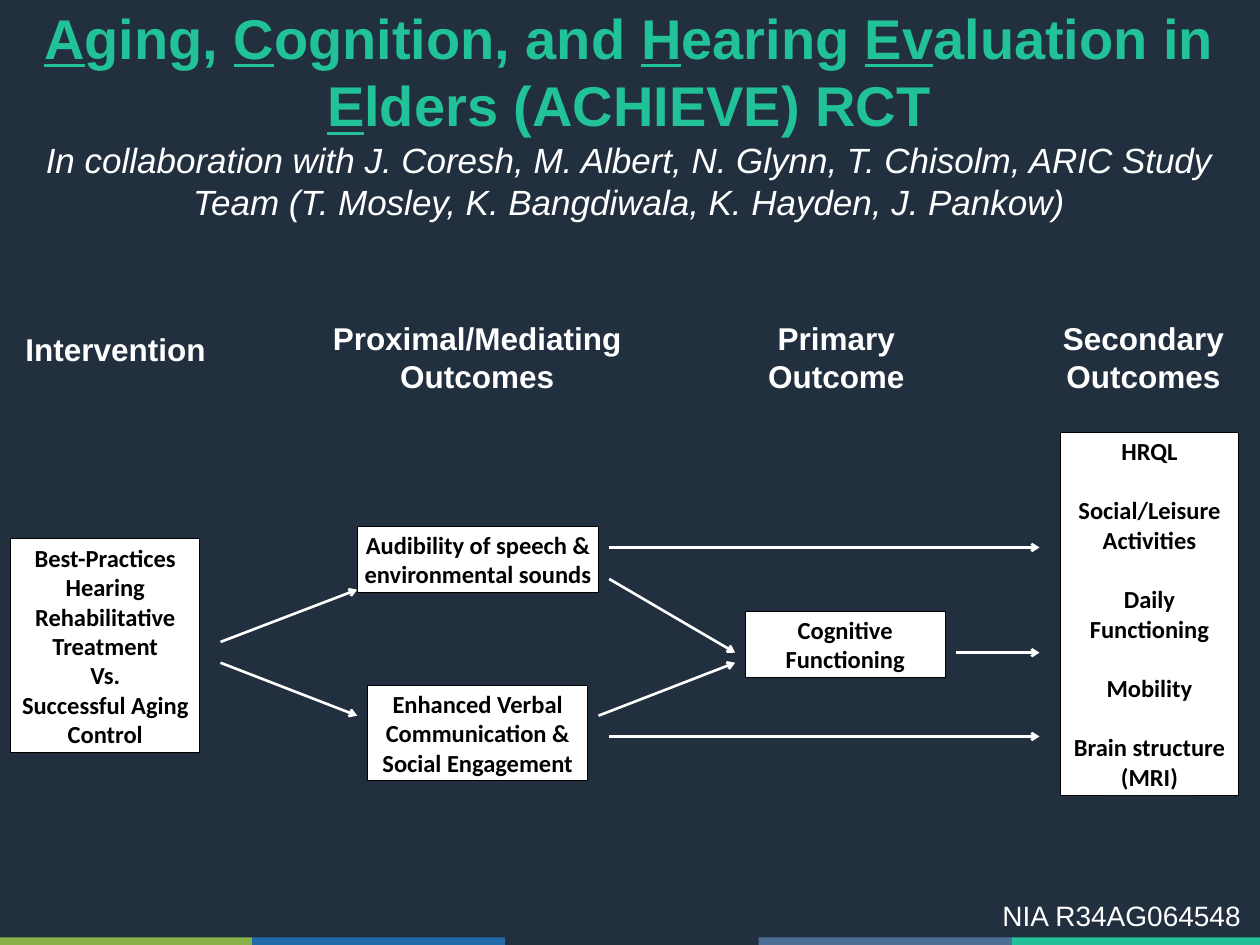
import pptx
import pptx.util
import pptx.dml.color
import pptx.enum.shapes
import pptx.enum.text
import lxml.etree
from dataclasses import dataclass
from pptx.util import Inches


@dataclass(frozen=True)
class Theme:
    navy: str = "212F3F"
    teal: str = "22C299"
    white: str = "FFFFFF"
    black: str = "000000"
    bands: tuple = ("8AB147", "216BA9", "212F3F", "4D6F96", "22C199")
    title_size: int = 64
    subtitle_size: int = 40
    heading_size: int = 36
    grant_size: int = 32
    box_size: int = 28
    group_gap: float = 34.2
    arrow_width: int = 3
    box_line: float = 0.75


THEME = Theme()

# Content: (text, underlined) pieces of the title
TITLE = [("A", True), ("ging, ", False), ("C", True), ("ognition, and ", False),
         ("H", True), ("earing ", False), ("Ev", True), ("aluation in ", False),
         ("E", True), ("lders (ACHIEVE) RCT", False)]
SUBTITLE = ("In collaboration with J. Coresh, M. Albert, N. Glynn, T. Chisolm, ARIC Study "
            "Team (T. Mosley, K. Bangdiwala, K. Hayden, J. Pankow)")
GRANT = "NIA R34AG064548"
TITLE_AREA = (0.29, 0.01, 19.38, 3.6)
GRANT_AREA = (15.8, 14.21, 4.01, 0.64)

# Column headings: lines, area (left, top, width, height)
HEADINGS = [
    (["Intervention"], (0.29, 5.19, 3.09, 0.71)),
    (["Proximal/Mediating", "Outcomes"], (5.16, 5.02, 4.83, 1.31)),
    (["Primary", "Outcome"], (12.08, 5.02, 2.39, 1.31)),
    (["Secondary", "Outcomes"], (16.76, 5.02, 2.78, 1.31)),
]

# Boxes: groups of lines (a gap precedes each later group), area
BOXES = [
    ([["Best-Practices Hearing Rehabilitative Treatment", "Vs.", "Successful Aging Control"]],
     (0.17, 8.55, 3, 3.4)),
    ([["Audibility of speech & environmental sounds"]], (5.67, 8.36, 3.83, 1.04)),
    ([["Enhanced Verbal Communication & Social Engagement"]], (5.83, 10.88, 3.5, 1.51)),
    ([["Cognitive", "Functioning"]], (11.83, 9.71, 3.17, 1.04)),
    ([["HRQL"], ["Social/Leisure Activities"], ["Daily", "Functioning"], ["Mobility"],
      ["Brain structure (MRI)"]], (16.83, 6.86, 2.83, 5.76)),
]

# Arrows: start x, start y, end x, end y
ARROWS = [
    (3.5, 10.19, 5.67, 9.36),
    (3.5, 10.52, 5.67, 11.36),
    (9.67, 9.19, 11.67, 10.36),
    (9.5, 11.36, 11.67, 10.52),
    (9.67, 8.69, 16.5, 8.69),
    (9.67, 11.69, 16.5, 11.69),
    (15.17, 10.36, 16.5, 10.36),
]

RECTANGLE = pptx.enum.shapes.MSO_SHAPE.RECTANGLE
CENTER = pptx.enum.text.PP_ALIGN.CENTER
TOP = pptx.enum.text.MSO_ANCHOR.TOP
MIDDLE = pptx.enum.text.MSO_ANCHOR.MIDDLE


def rgb(color):
    return pptx.dml.color.RGBColor.from_string(color)


def inches(area):
    return [Inches(value) for value in area]


def add_run(paragraph, text, size, color, **formats):
    run = paragraph.add_run()
    run.text = text
    values = {"name": "Arial", "size": pptx.util.Pt(size), **formats}
    for name, value in values.items():
        setattr(run.font, name, value)
    run.font.color.rgb = rgb(color)


def set_frame(frame, wrap, anchor):
    values = {"word_wrap": wrap, "vertical_anchor": anchor,
              "auto_size": pptx.enum.text.MSO_AUTO_SIZE.NONE}
    for name, value in values.items():
        setattr(frame, name, value)


def fill_lines(frame, groups, size, color, **formats):
    """Write groups of centred lines, with a gap before each later group."""
    paragraph = None
    for group in groups:
        for index, line in enumerate(group):
            first = paragraph is None
            paragraph = frame.paragraphs[0] if first else frame.add_paragraph()
            paragraph.alignment = CENTER
            gap = THEME.group_gap if index == 0 and not first else 0
            paragraph.space_before = pptx.util.Pt(gap)
            add_run(paragraph, line, size, color, **formats)


def add_rectangle(slide, area, color):
    shape = slide.shapes.add_shape(RECTANGLE, *inches(area))
    shape.shadow.inherit = False
    shape.fill.solid()
    shape.fill.fore_color.rgb = rgb(color)
    shape.line.fill.background()
    return shape


def add_label(slide, area, lines, size, **formats):
    frame = slide.shapes.add_textbox(*inches(area)).text_frame
    set_frame(frame, False, TOP)
    fill_lines(frame, [lines], size, THEME.white, **formats)


def add_box(slide, area, groups):
    box = add_rectangle(slide, area, THEME.white)
    box.line.color.rgb = rgb(THEME.black)
    box.line.width = pptx.util.Pt(THEME.box_line)
    set_frame(box.text_frame, True, MIDDLE)
    fill_lines(box.text_frame, groups, THEME.box_size, THEME.black, name="Calibri", bold=True)


def add_arrow(slide, ends):
    straight = pptx.enum.shapes.MSO_CONNECTOR.STRAIGHT
    arrow = slide.shapes.add_connector(straight, *inches(ends))
    arrow.line.color.rgb = rgb(THEME.white)
    arrow.line.width = pptx.util.Pt(THEME.arrow_width)
    tail = lxml.etree.SubElement(arrow.line._get_or_add_ln(), pptx.oxml.ns.qn("a:tailEnd"))
    tail.set("type", "arrow")
    properties = arrow._element.spPr
    lxml.etree.SubElement(properties, pptx.oxml.ns.qn("a:effectLst"))


def add_title(slide):
    title = slide.shapes.title
    for name, value in zip(("left", "top", "width", "height"), inches(TITLE_AREA)):
        setattr(title, name, value)
    frame = title.text_frame
    set_frame(frame, True, TOP)
    heading, subtitle = frame.paragraphs[0], frame.add_paragraph()
    heading.alignment = subtitle.alignment = CENTER
    for text, underlined in TITLE:
        add_run(heading, text, THEME.title_size, THEME.teal, bold=True, underline=underlined)
    add_run(subtitle, SUBTITLE, THEME.subtitle_size, THEME.white, bold=False, italic=True)


def main():
    presentation = pptx.Presentation()
    presentation.slide_width, presentation.slide_height = Inches(20), Inches(15)
    slide = presentation.slides.add_slide(presentation.slide_layouts[5])
    slide.background.fill.solid()
    slide.background.fill.fore_color.rgb = rgb(THEME.navy)

    # Colour bands along the bottom edge
    for index, color in enumerate(THEME.bands):
        add_rectangle(slide, (-0.02 + 4.02 * index, 14.88, 4.02, 0.2), color)

    # Title and column headings
    add_title(slide)
    for lines, area in HEADINGS:
        add_label(slide, area, lines, THEME.heading_size, bold=True)

    # Flow of boxes and arrows
    for groups, area in BOXES:
        add_box(slide, area, groups)
    for ends in ARROWS:
        add_arrow(slide, ends)

    # Grant number
    add_label(slide, GRANT_AREA, [GRANT], THEME.grant_size)
    presentation.save("out.pptx")


if __name__ == "__main__":
    main()
